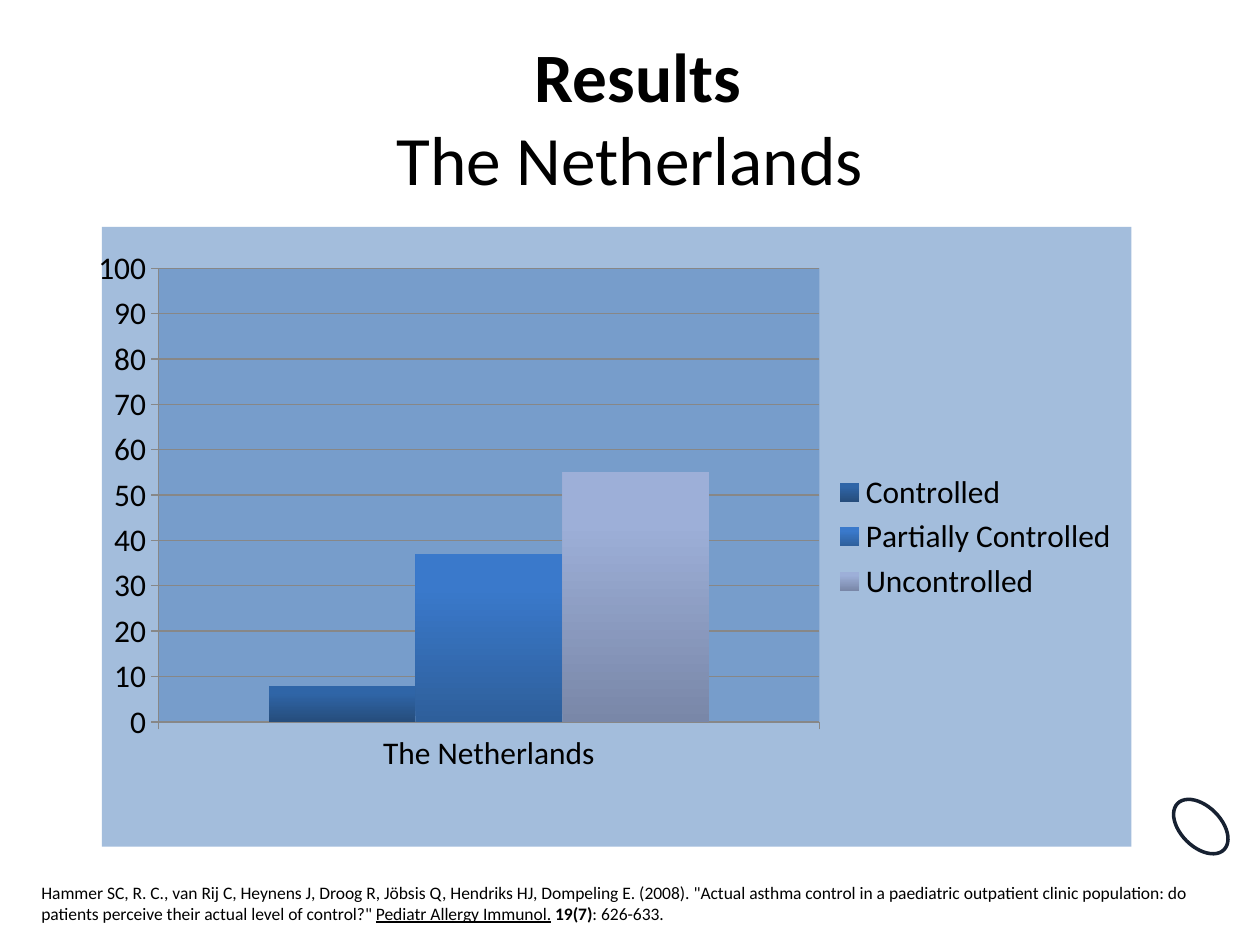
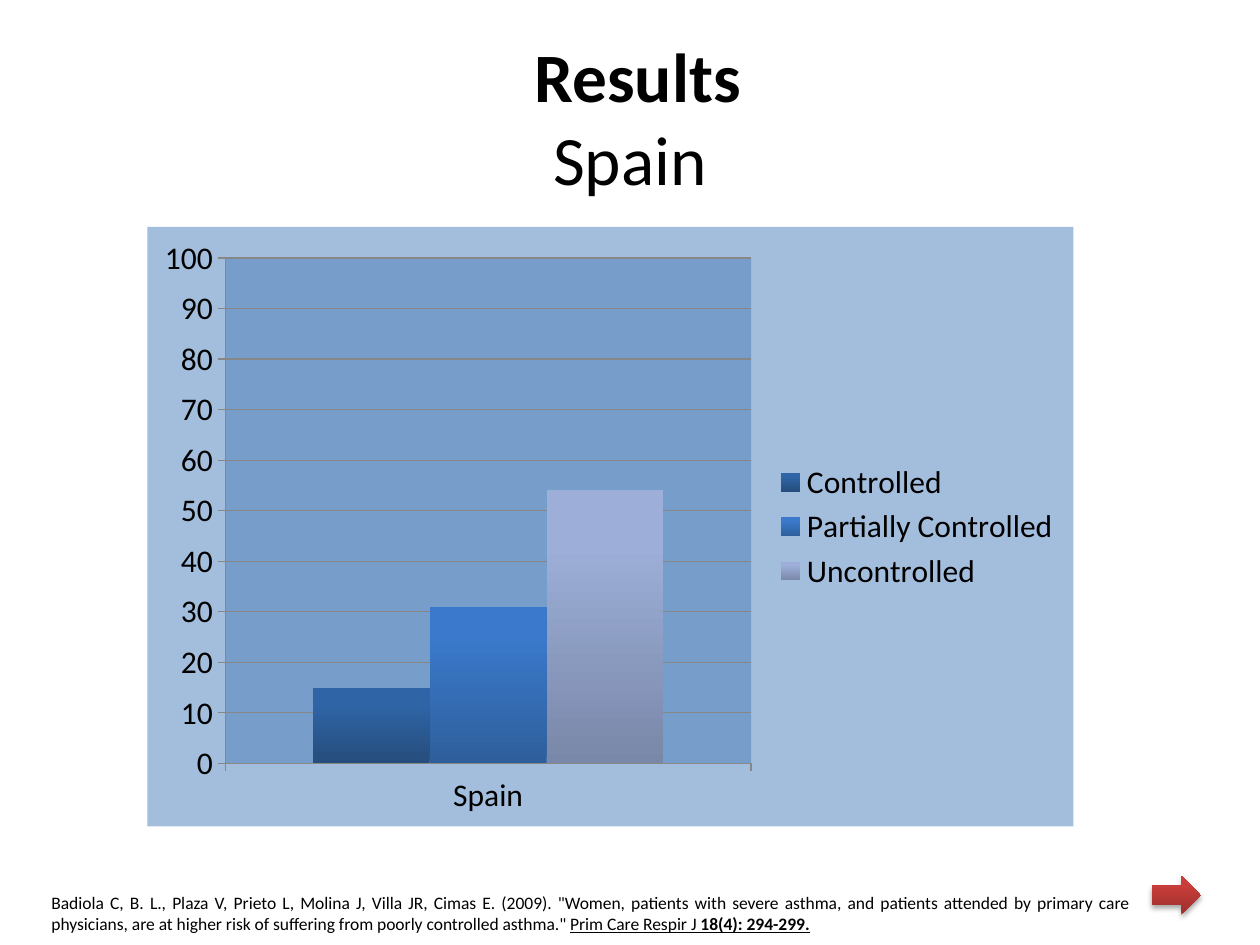
"""Build two result slides on asthma control, one country each."""
from lxml import etree
from pptx import Presentation
from pptx.chart.data import CategoryChartData
from pptx.dml.color import RGBColor
from pptx.enum.chart import XL_CHART_TYPE, XL_LEGEND_POSITION, XL_TICK_MARK
from pptx.enum.shapes import MSO_SHAPE
from pptx.enum.text import MSO_ANCHOR, PP_ALIGN
from pptx.oxml import parse_xml
from pptx.oxml.ns import qn
from pptx.util import Inches, Pt

COLUMNS = XL_CHART_TYPE.COLUMN_CLUSTERED
RIGHT = XL_LEGEND_POSITION.RIGHT
OUTSIDE = XL_TICK_MARK.OUTSIDE
OVAL, ARROW = MSO_SHAPE.OVAL, MSO_SHAPE.RIGHT_ARROW
MIDDLE, TOP = MSO_ANCHOR.MIDDLE, MSO_ANCHOR.TOP
LEFT, CENTER, JUSTIFY = PP_ALIGN.LEFT, PP_ALIGN.CENTER, PP_ALIGN.JUSTIFY

FONT = "Calibri"
COLORS = {"text": "000000", "panel": "4F81BD", "grid": "878787",
          "paper": "FFFFFF", "ring": "172131"}
LEVELS = [("Controlled", "264D7C", "2F65A7"),
          ("Partially Controlled", "2E5F9B", "3A79CB"),
          ("Uncontrolled", "7987A8", "9DAFD8")]
ARROW_COLORS = ("9C2F2D", "CB3E3A")
TITLE_AREA = (0.5, 0.3, 9, 1.25)
DRAWING = 'xmlns:a="http://schemas.openxmlformats.org/drawingml/2006/main"'
CHART = 'xmlns:c="http://schemas.openxmlformats.org/drawingml/2006/chart"'

RESULTS = [
    {"country": "The Netherlands", "values": (8, 37, 55),
     "title": [(" ", {}), ("Results", {"bold": True})],
     "chart": (0.78, 1.8, 8.2, 4.92), "plot": (0.055, 0.067, 0.642, 0.732),
     "source_area": (0.23, 6.95, 9.53, 0.5), "align": LEFT,
     "source": [
         ("Hammer SC, R. C., van Rij C, Heynens J, Droog R, Jöbsis Q, Hendriks HJ, "
          "Dompeling E. (2008). \"Actual asthma control in a paediatric outpatient "
          "clinic population: do patients perceive their actual level of control?\" ", {}),
         ("Pediatr Allergy Immunol.", {"underline": True}),
         (" ", {}),
         ("19(7)", {"bold": True}),
         (": 626-633.", {})]},
    {"country": "Spain", "values": (15, 31, 54),
     "title": [(" Results", {"bold": True})],
     "chart": (1.17, 1.8, 7.35, 4.76), "plot": (0.084, 0.052, 0.568, 0.843),
     "source_area": (0.31, 7.03, 8.75, 0.44), "align": JUSTIFY,
     "source": [
         ("Badiola C, B. L., Plaza V, Prieto L, Molina J, Villa JR, Cimas E. (2009). "
          "\"Women, patients with severe asthma, and patients attended by primary care "
          "physicians, are at higher risk of suffering from poorly controlled asthma.\" ", {}),
         ("Prim Care Respir J ", {"underline": True}),
         ("18(4): 294-299.", {"underline": True, "bold": True})]},
]


def rgb(value):
    return RGBColor.from_string(value)


def inches(area):
    return [Inches(length) for length in area]


def style(target, formats):
    for name, value in formats.items():
        setattr(target, name, value)


def add_spans(para, spans, size):
    for text, formats in spans:
        span = para.add_run()
        span.text = text
        style(span.font, {"name": FONT, "size": Pt(size), **formats})
        span.font.color.rgb = rgb(COLORS["text"])


def add_text(page, area, align, anchor):
    box = page.shapes.add_textbox(*inches(area))
    style(box.text_frame, {"word_wrap": True, "vertical_anchor": anchor})
    para = box.text_frame.paragraphs[0]
    para.alignment = align
    return para


def fade(fill, bottom, top):
    fill.gradient()
    fill.gradient_angle = 90
    for stop, color, position in zip(fill.gradient_stops, (bottom, top), (0, 0.8)):
        stop.color.rgb = rgb(color)
        stop.position = position


def panel():
    return parse_xml(
        f'<c:spPr {CHART} {DRAWING}><a:solidFill><a:srgbClr val="{COLORS["panel"]}">'
        '<a:alpha val="52000"/></a:srgbClr></a:solidFill>'
        '<a:ln><a:noFill/></a:ln></c:spPr>')


def place_plot(area, shares):
    for old in area.findall(qn("c:layout")):
        area.remove(old)
    layout = etree.Element(qn("c:layout"))
    manual = etree.SubElement(layout, qn("c:manualLayout"))
    settings = [("layoutTarget", "inner"), ("xMode", "edge"), ("yMode", "edge"),
                *zip("xywh", shares)]
    for name, value in settings:
        etree.SubElement(manual, qn(f"c:{name}")).set("val", str(value))
    area.insert(0, layout)


def add_result_chart(page, result):
    data = CategoryChartData()
    data.categories = [result["country"]]
    for (name, *_), value in zip(LEVELS, result["values"]):
        data.add_series(name, [value])
    chart = page.shapes.add_chart(COLUMNS, *inches(result["chart"]), data).chart
    style(chart, {"has_title": False, "has_legend": True})
    style(chart.legend, {"position": RIGHT, "include_in_layout": False})
    style(chart.font, {"name": FONT, "size": Pt(18)})
    chart.font.color.rgb = rgb(COLORS["text"])

    style(chart.value_axis, {"minimum_scale": 0, "maximum_scale": 100, "major_unit": 10,
                             "has_major_gridlines": True})
    for axis in (chart.category_axis, chart.value_axis):
        axis.major_tick_mark = OUTSIDE
    for part in (chart.category_axis, chart.value_axis, chart.value_axis.major_gridlines):
        part.format.line.color.rgb = rgb(COLORS["grid"])
        part.format.line.width = Pt(0.75)

    plot = chart.plots[0]
    style(plot, {"gap_width": 150, "overlap": 0, "vary_by_categories": False})
    for series, (_, bottom, top) in zip(plot.series, LEVELS):
        fade(series.format.fill, bottom, top)

    body = chart.element.find(qn("c:chart"))
    body.addnext(panel())
    area = body.find(qn("c:plotArea"))
    area.append(panel())
    place_plot(area, result["plot"])


def add_ring(page):
    ring = page.shapes.add_shape(OVAL, *inches((9.27, 6.4, 0.52, 0.32)))
    style(ring, {"rotation": 45})
    ring.shadow.inherit = False
    ring.fill.solid()
    ring.fill.fore_color.rgb = rgb(COLORS["paper"])
    ring.line.color.rgb = rgb(COLORS["ring"])
    ring.line.width = Pt(2)


def add_arrow(page):
    arrow = page.shapes.add_shape(ARROW, *inches((9.14, 6.95, 0.39, 0.31)))
    fade(arrow.fill, *ARROW_COLORS)
    arrow.line.fill.background()
    arrow.element.spPr.append(parse_xml(
        f'<a:effectLst {DRAWING}><a:outerShdw blurRad="{Pt(3.1)}" dist="{Pt(1.8)}" '
        'dir="5400000" rotWithShape="0"><a:srgbClr val="000000"><a:alpha val="35000"/>'
        '</a:srgbClr></a:outerShdw></a:effectLst>'))


def add_result(deck, result, add_mark):
    page = deck.slides.add_slide(deck.slide_layouts[6])
    title = add_text(page, TITLE_AREA, CENTER, MIDDLE)
    add_spans(title, result["title"], 39.6)
    title.add_line_break()
    add_spans(title, [(result["country"], {})], 39.6)
    source = add_text(page, result["source_area"], result["align"], TOP)
    add_spans(source, result["source"], 10)
    add_result_chart(page, result)
    add_mark(page)


def main():
    deck = Presentation()
    style(deck, {"slide_width": Inches(10), "slide_height": Inches(7.5)})
    for result, add_mark in zip(RESULTS, (add_ring, add_arrow)):
        add_result(deck, result, add_mark)
    deck.save("out.pptx")


if __name__ == "__main__":
    main()
